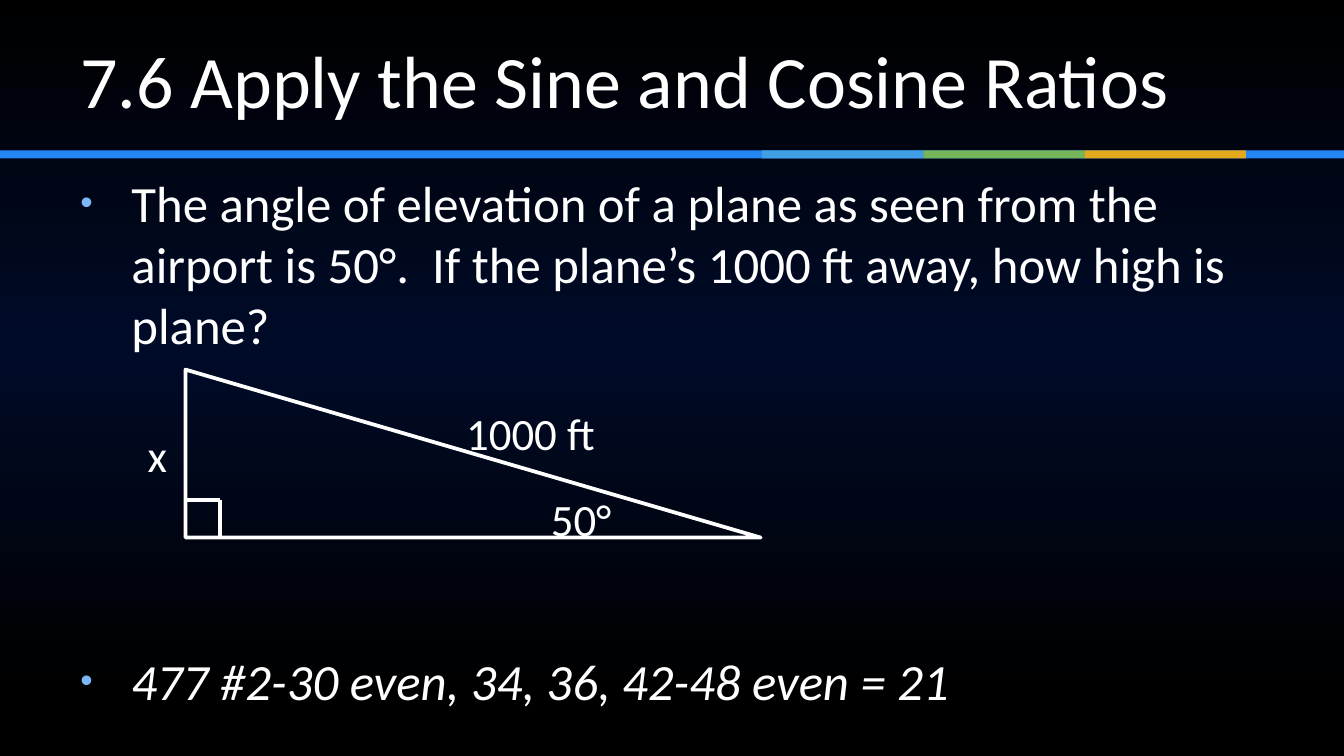
import copy
import pptx
import pptx.util
import pptx.dml.color
import pptx.enum.shapes
import pptx.enum.text
import pptx.oxml.ns
import lxml.etree

WIDE = 10
HIGH = WIDE * 9 / 16
FONT = "Calibri"
HUES = {"black": "000000", "navy": "000B28", "white": "FFFFFF", "blue": "2486F3",
        "sky": "3F9EE4", "green": "77B559", "gold": "E4A81B", "dot": "7CB7F8"}

TITLE = "7.6 Apply the Sine and Cosine Ratios"
ITEMS = [
    ("The angle of elevation of a plane as seen from the airport is 50°.  "
     "If the plane’s 1000 ft away, how high is plane?", 0, False),
    ("477 #2-30 even, 34, 36, 42-48 even = 21", 158, True),
]
LABELS = [("50°", 4, 3.61, 0.75), ("x", 1, 3.13, 0.31), ("1000 ft", 3.37, 2.97, 1.21)]
GLOW = [(0, "black"), (50, "navy"), (100, "black")]
BANDS = ["sky", "green", "gold"]
BAND_X, BAND_Y, BAND_W, BAND_H = 5.67, 1.12, 1.2, 0.06
TRI_X, TRI_Y, TRI_W, TRI_H = 1.38, 2.75, 4.28, 1.25
MARK_W, MARK_H = 0.26, 0.28

KIND = pptx.enum.shapes.MSO_SHAPE
ANCHOR = pptx.enum.text.MSO_ANCHOR
qn = pptx.oxml.ns.qn


def inch(*nums):
    return [pptx.util.Inches(num) for num in nums]


def hue(name):
    return pptx.dml.color.RGBColor.from_string(HUES[name])


def shape(kind, *box, fill=None, line=None):
    item = slide.shapes.add_shape(kind, *inch(*box))
    item.shadow.inherit = False
    if fill:
        item.fill.solid()
        item.fill.fore_color.rgb = hue(fill)
    else:
        item.fill.background()
    if line:
        item.line.color.rgb = hue("white")
        item.line.width = pptx.util.Pt(line)
    else:
        item.line.fill.background()
    return item


def shade(item):
    item.fill.gradient()
    item.fill.gradient_angle = 270
    row = item.element.spPr.find(qn("a:gradFill")).find(qn("a:gsLst"))
    row.insert(1, copy.deepcopy(row[0]))
    for stop, (pos, name) in zip(item.fill.gradient_stops, GLOW):
        stop.position = pos / 100
        stop.color.rgb = hue(name)


def frame(*box, anchor=ANCHOR.TOP, wrap=True):
    area = slide.shapes.add_textbox(*inch(*box)).text_frame
    area.word_wrap = wrap
    area.vertical_anchor = anchor
    return area


def write(para, words, size, slant=False):
    run = para.add_run()
    run.text = words
    run.font.name = FONT
    run.font.size = pptx.util.Pt(size)
    run.font.italic = slant
    run.font.color.rgb = hue("white")


def bullet(para):
    props = para._p.get_or_add_pPr()
    props.set("marL", str(pptx.util.Inches(0.38)))
    props.set("indent", str(pptx.util.Inches(-0.38)))
    tint = lxml.etree.SubElement(props, qn("a:buClr"))
    lxml.etree.SubElement(tint, qn("a:srgbClr"), val=HUES["dot"])
    lxml.etree.SubElement(props, qn("a:buSzPct"), val="70000")
    lxml.etree.SubElement(props, qn("a:buFont"), typeface="Arial")
    lxml.etree.SubElement(props, qn("a:buChar"), char="•")


def line(start, end):
    item = slide.shapes.add_connector(
        pptx.enum.shapes.MSO_CONNECTOR.STRAIGHT, *inch(*start, *end))
    item.line.color.rgb = hue("white")
    item.line.width = pptx.util.Pt(2.25)
    lxml.etree.SubElement(item.element.spPr, qn("a:effectLst"))


deck = pptx.Presentation()
deck.slide_width, deck.slide_height = inch(WIDE, HIGH)
slide = deck.slides.add_slide(deck.slide_layouts[6])
slide.background.fill.solid()
slide.background.fill.fore_color.rgb = hue("black")

shade(shape(KIND.RECTANGLE, 0, 0, WIDE, 5.16))
shape(KIND.RECTANGLE, 0, BAND_Y, WIDE, BAND_H, fill="blue")
for col, name in enumerate(BANDS):
    shape(KIND.RECTANGLE, BAND_X + col * BAND_W, BAND_Y, BAND_W, BAND_H, fill=name)

body = frame(0.5, 1.23, 9, 3.79)
for rank, (words, gap, slant) in enumerate(ITEMS):
    para = body.add_paragraph() if rank else body.paragraphs[0]
    para.space_before = pptx.util.Pt(gap)
    bullet(para)
    write(para, words, 27.2, slant)

head = frame(0.5, 0.12, 9, 0.94, anchor=ANCHOR.MIDDLE)
write(head.paragraphs[0], TITLE, 39.6)

shape(KIND.RIGHT_TRIANGLE, TRI_X, TRI_Y, TRI_W, TRI_H, line=2)
for words, left, top, wide in LABELS:
    write(frame(left, top, wide, 0.5, wrap=False).paragraphs[0], words, 24)

base = TRI_Y + TRI_H
nook = (TRI_X + MARK_W, base - MARK_H)
line((TRI_X + MARK_W, base), nook)
line(nook, (TRI_X, base - MARK_H))

deck.save("out.pptx")
